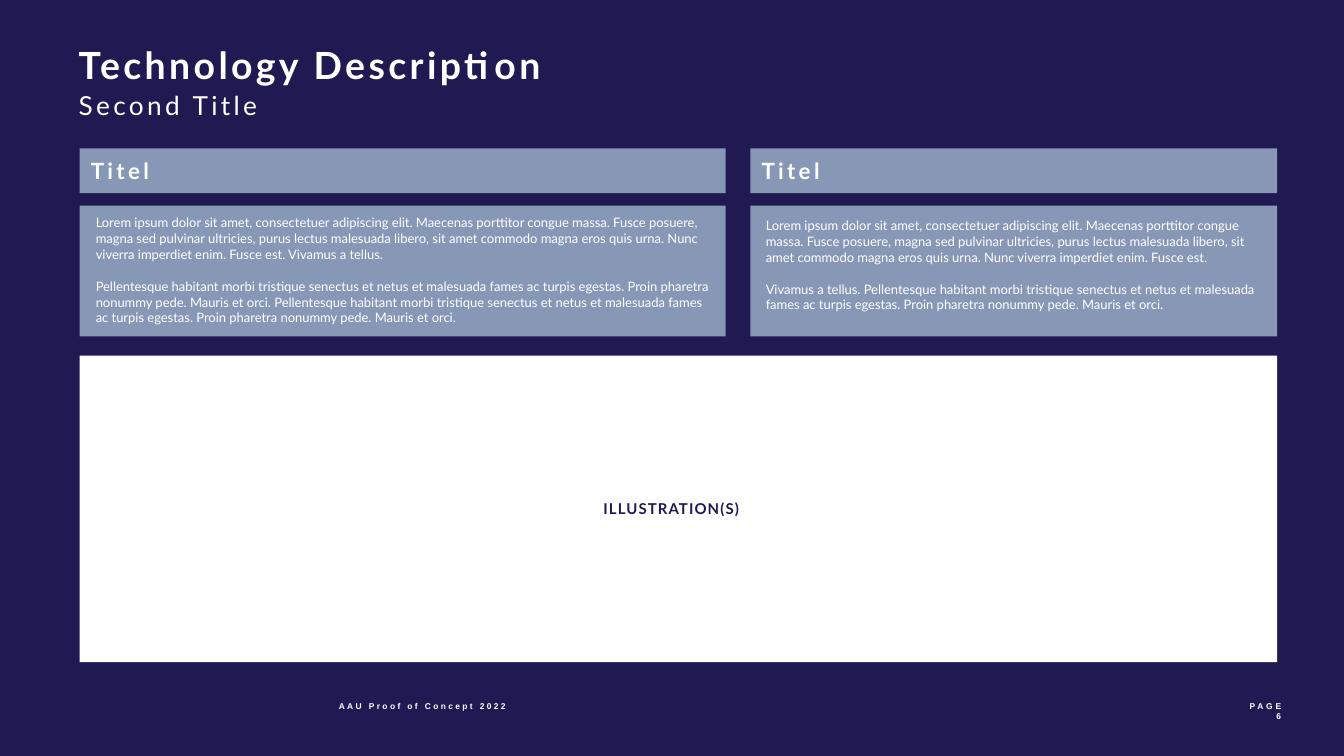
from dataclasses import dataclass

from pptx import Presentation
from pptx.dml.color import RGBColor
from pptx.enum.shapes import MSO_SHAPE as Shape
from pptx.enum.text import MSO_ANCHOR as Anchor, MSO_AUTO_SIZE as AutoSize, PP_ALIGN as Align
from pptx.util import Pt


@dataclass(frozen=True)
class TextStyle:
    size: float
    color: str
    bold: bool = False
    tracking: float = 0
    font: str = "Lato"
    leading: float = 0


class Theme:
    NAVY, PANEL, WHITE = "211A52", "8797B6", "FFFFFF"
    TITLE = TextStyle(26.7, WHITE, True, 2.4)
    SUBTITLE = TextStyle(18.7, WHITE, False, 2.4)
    HEADING = TextStyle(16, WHITE, True, 2.4)
    BODY = TextStyle(9.3, WHITE, leading=11.3)
    LABEL = TextStyle(10.7, NAVY, True, 0.8)
    FOOTER = TextStyle(6, WHITE, True, 1.7, "Arial")
    PAGE = TextStyle(6, WHITE, True, 2, "Arial")


LEFT, RIGHT = 56.9, 912.2
COLUMNS = [
    # left, width, inset left, inset top of the body, paragraphs
    (LEFT, 461.5, 11.5, 6.6, [
        "Lorem ipsum dolor sit amet, consectetuer adipiscing elit. Maecenas porttitor congue massa. "
        "Fusce posuere, magna sed pulvinar ultricies, purus lectus malesuada libero, sit amet commodo "
        "magna eros quis urna. Nunc viverra imperdiet enim. Fusce est. Vivamus a tellus.",
        "Pellentesque habitant morbi tristique senectus et netus et malesuada fames ac turpis egestas. "
        "Proin pharetra nonummy pede. Mauris et orci. Pellentesque habitant morbi tristique senectus et "
        "netus et malesuada fames ac turpis egestas. Proin pharetra nonummy pede. Mauris et orci.",
    ]),
    (536, RIGHT - 536, 11, 8.6, [
        "Lorem ipsum dolor sit amet, consectetuer adipiscing elit. Maecenas porttitor congue massa. "
        "Fusce posuere, magna sed pulvinar ultricies, purus lectus malesuada libero, sit amet commodo "
        "magna eros quis urna. Nunc viverra imperdiet enim. Fusce est.",
        "Vivamus a tellus. Pellentesque habitant morbi tristique senectus et netus et malesuada fames "
        "ac turpis egestas. Proin pharetra nonummy pede. Mauris et orci.",
    ]),
]


def write(shape, paragraphs, style, align=Align.LEFT, anchor=Anchor.TOP, insets=(0, 0, 0, 0)):
    """Fill a shape with paragraphs; insets run left, top, right, bottom."""
    frame = shape.text_frame
    frame.text = "\n".join(paragraphs)
    frame.word_wrap = True
    frame.auto_size = AutoSize.NONE
    frame.vertical_anchor = anchor
    frame.margin_left, frame.margin_top, frame.margin_right, frame.margin_bottom = map(Pt, insets)
    for index, paragraph in enumerate(frame.paragraphs):
        paragraph.alignment = align
        if style.leading:
            paragraph.line_spacing = Pt(style.leading)
            paragraph.space_before = Pt(style.leading if index else 0)
        font = paragraph.font
        font.name, font.size, font.bold = style.font, Pt(style.size), style.bold
        font.color.rgb = RGBColor.from_string(style.color)
        if style.tracking:
            properties = paragraph._p.get_or_add_pPr().get_or_add_defRPr()
            properties.set("spc", str(round(style.tracking * 100)))


def add_panel(slide, box, color):
    panel = slide.shapes.add_shape(Shape.RECTANGLE, *map(Pt, box))
    panel.shadow.inherit = False
    panel.fill.solid()
    panel.fill.fore_color.rgb = RGBColor.from_string(color)
    panel.line.fill.background()
    return panel


def add_text(slide, box, paragraphs, style, align=Align.LEFT):
    write(slide.shapes.add_textbox(*map(Pt, box)), paragraphs, style, align)


def add_header(slide, left, top, width):
    title = slide.shapes.title
    title.left, title.top, title.width, title.height = map(Pt, (left, top, width, 32.4))
    write(title, ["Technology Description"], Theme.TITLE)
    add_text(slide, (left, top + 33.1, width, 22.3), ["Second Title"], Theme.SUBTITLE)


def add_column(slide, left, top, width, inset, body_inset_top, paragraphs):
    heading = add_panel(slide, (left, top, width, 32), Theme.PANEL)
    write(heading, ["Titel"], Theme.HEADING, anchor=Anchor.MIDDLE, insets=(8, 0, 8, 0))
    body = add_panel(slide, (left, top + 40.8, width, 93.4), Theme.PANEL)
    write(body, paragraphs, Theme.BODY, insets=(inset, body_inset_top, inset, 0))


def add_illustration(slide, box):
    area = add_panel(slide, box, Theme.WHITE)
    write(area, ["ILLUSTRATION(S)"], Theme.LABEL, Align.CENTER, Anchor.MIDDLE, (0, 0, 10, 0))


def add_footer(slide, top):
    add_text(slide, (242, top, 143, 22), ["AAU Proof of Concept 2022"], Theme.FOOTER)
    add_text(slide, (803.5, top, 111.6, 22), ["PAGE", "6"], Theme.PAGE, Align.RIGHT)


def main():
    presentation = Presentation()
    presentation.slide_width, presentation.slide_height = Pt(960), Pt(540)
    slide = presentation.slides.add_slide(presentation.slide_layouts[5])
    slide.background.fill.solid()
    slide.background.fill.fore_color.rgb = RGBColor.from_string(Theme.NAVY)

    add_header(slide, 56.2, 30.4, 392)
    for left, width, inset, body_inset_top, paragraphs in COLUMNS:
        add_column(slide, left, 106, width, inset, body_inset_top, paragraphs)
    add_illustration(slide, (LEFT, 254, RIGHT - LEFT, 219))
    add_footer(slide, 501)
    presentation.save("out.pptx")


if __name__ == "__main__":
    main()
